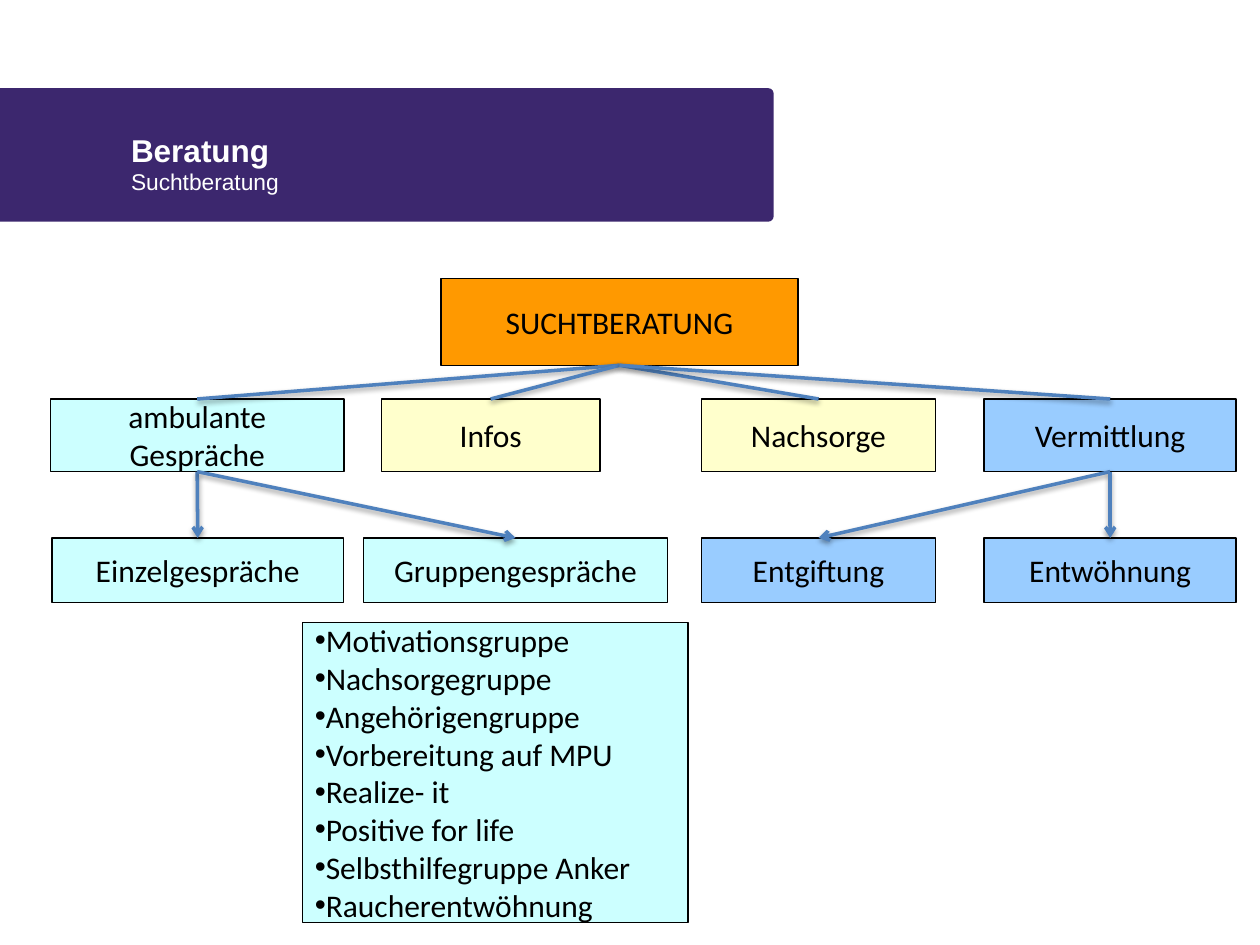
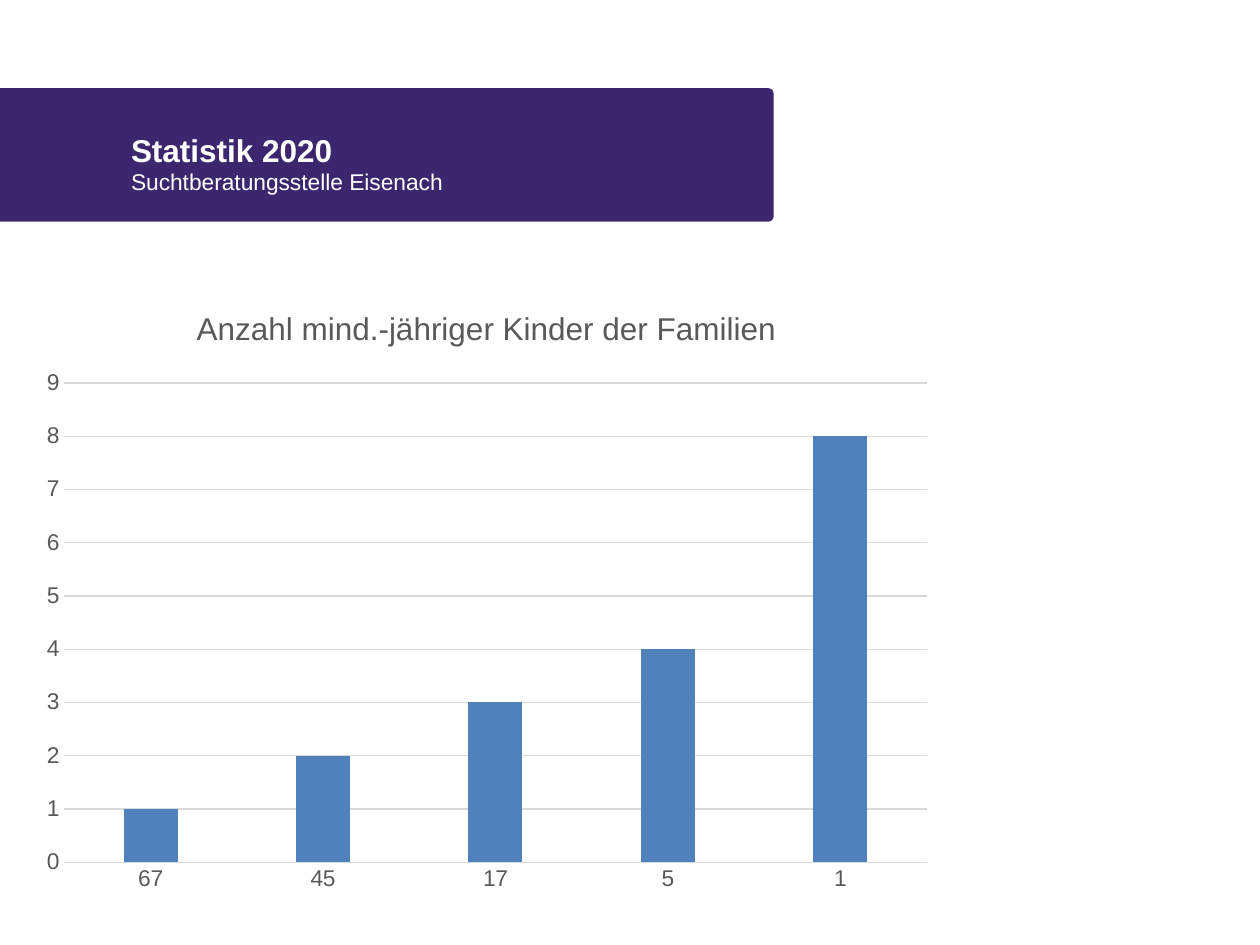
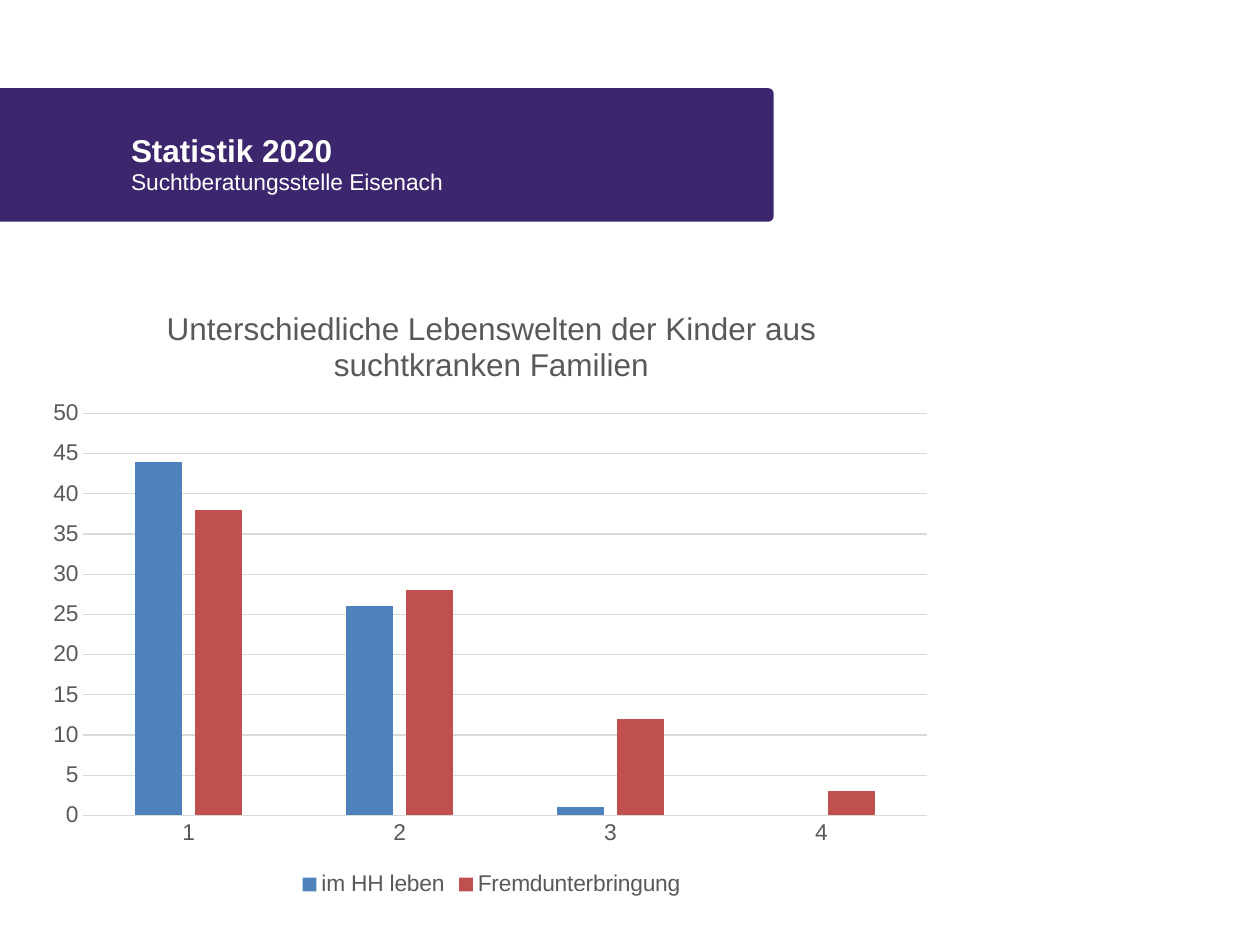
import pptx
import pptx.chart.data
import pptx.dml.color
import pptx.enum.chart
import pptx.enum.shapes
import pptx.enum.text
import pptx.oxml
import pptx.oxml.ns
import pptx.util

Pt = pptx.util.Pt
SHAPE = pptx.enum.shapes.MSO_SHAPE
ANCHOR = pptx.enum.text.MSO_ANCHOR
ALIGN = pptx.enum.text.PP_ALIGN
PURPLE, WHITE, BLACK = "3C276E", "FFFFFF", "000000"
ORANGE, CYAN, YELLOW, SKY = "FF9900", "CCFFFF", "FFFFCC", "99CCFF"
BLUE, RED, GREY, RULE = "4F81BD", "C0504D", "595959", "D9D9D9"


def color(value):
    return pptx.dml.color.RGBColor.from_string(value)


def element(markup):
    tag, rest = markup[1:].split(">", 1) if " " not in markup.split(">")[0] else (None, None)
    name = tag.rstrip("/") if tag else markup[1:].split(" ")[0]
    space = pptx.oxml.ns.nsdecls(name.split(":")[0])
    return pptx.oxml.parse_xml(markup.replace("<" + name, f"<{name} {space}", 1))


class Builder:
    """Holds the deck's shared style and the page being built."""

    def __init__(self):
        self.deck = pptx.Presentation()
        self.deck.slide_width, self.deck.slide_height = Pt(720), Pt(540)
        self.page = None

    def font(self, font, size, hue, name="Arial", bold=False):
        font.size, font.name, font.bold = Pt(size), name, bold
        font.color.rgb = color(hue)

    def start(self, title, subtitle):
        self.page = self.deck.slides.add_slide(self.deck.slide_layouts[6])
        band = self.rectangle((-8.6, 50.4, 450.7, 76.3), PURPLE, SHAPE.ROUNDED_RECTANGLE)
        band.adjustments[0] = 0.04
        band.line.fill.background()
        self.heading(title, 66.2, 30.2, ANCHOR.BOTTOM, 18, True)
        self.heading(subtitle, 95.8, 28, ANCHOR.TOP, 13, False)

    def heading(self, text, top, height, anchor, size, bold):
        box = self.page.shapes.add_textbox(Pt(74.9), Pt(top), Pt(352.8), Pt(height))
        frame = box.text_frame
        frame.word_wrap, frame.vertical_anchor = True, anchor
        frame.margin_left = frame.margin_right = frame.margin_top = frame.margin_bottom = 0
        span = frame.paragraphs[0].add_run()
        span.text = text
        self.font(span.font, size, WHITE, bold=bold)

    def rectangle(self, place, fill, kind=SHAPE.RECTANGLE):
        box = self.page.shapes.add_shape(kind, *map(Pt, place))
        box.shadow.inherit = False
        box.fill.solid()
        box.fill.fore_color.rgb = color(fill)
        return box

    def box(self, place, fill, *lines, bullets=False):
        box = self.rectangle(place, fill)
        box.line.color.rgb, box.line.width = color(BLACK), Pt(0.75)
        frame = box.text_frame
        frame.word_wrap, frame.vertical_anchor = True, ANCHOR.MIDDLE
        for index, line in enumerate(lines):
            para = frame.add_paragraph() if index else frame.paragraphs[0]
            para.alignment = ALIGN.LEFT if bullets else ALIGN.CENTER
            if bullets:
                settings = para._p.get_or_add_pPr()
                settings.append(element('<a:buFont typeface="Arial"/>'))
                settings.append(element('<a:buChar char="•"/>'))
            span = para.add_run()
            span.text = line
            self.font(span.font, 18, BLACK, "Calibri")
        return box

    def link(self, parent, child, arrow=False):
        line = self.page.shapes.add_connector(pptx.enum.shapes.MSO_CONNECTOR.STRAIGHT, 0, 0, 0, 0)
        line.begin_connect(parent, 2)
        line.end_connect(child, 0)
        line.line.color.rgb, line.line.width = color(BLUE), Pt(2)
        if arrow:
            line.line._get_or_add_ln().append(element('<a:tailEnd type="arrow"/>'))
        line._element.spPr.append(element(
            f'<a:effectLst><a:outerShdw blurRad="{Pt(3.1)}" dist="{Pt(1.6)}" dir="5400000" rotWithShape="0">'
            f'<a:srgbClr val="{BLACK}"><a:alpha val="38000"/></a:srgbClr></a:outerShdw></a:effectLst>'))

    def chart(self, place, title, categories, series, top, step, plot, legend=False):
        data = pptx.chart.data.CategoryChartData()
        data.categories = categories
        for name, values, _ in series:
            data.add_series(name, values)
        kind = pptx.enum.chart.XL_CHART_TYPE.COLUMN_CLUSTERED
        chart = self.page.shapes.add_chart(kind, *map(Pt, place), data).chart
        self.font(chart.font, 13, GREY)
        chart.has_title = True
        span = chart.chart_title.text_frame.paragraphs[0].add_run()
        span.text = title
        self.font(span.font, 18, GREY)
        chart.has_legend = legend
        if legend:
            chart.legend.position = pptx.enum.chart.XL_LEGEND_POSITION.BOTTOM
            chart.legend.include_in_layout = False
            self.font(chart.legend.font, 13, GREY)
        bars = chart.plots[0]
        bars.gap_width, bars.overlap, bars.vary_by_categories = 219, -27, False
        for bar, (_, _, hue) in zip(bars.series, series):
            bar.format.fill.solid()
            bar.format.fill.fore_color.rgb = color(hue)
        for axis in (chart.category_axis, chart.value_axis):
            axis.major_tick_mark = axis.minor_tick_mark = pptx.enum.chart.XL_TICK_MARK.NONE
            self.font(axis.tick_labels.font, 13, GREY)
        scale = chart.value_axis
        scale.minimum_scale, scale.maximum_scale, scale.major_unit = 0, top, step
        scale.format.line.fill.background()
        scale.has_major_gridlines = True
        for line in (chart.category_axis.format.line, scale.major_gridlines.format.line):
            line.color.rgb, line.width = color(RULE), Pt(0.75)
        self.place_plot(chart, plot)

    def place_plot(self, chart, plot):
        area = chart.element.xpath("c:chart/c:plotArea")[0]
        for layout in area.xpath("c:layout"):
            area.remove(layout)
        sides = "".join(f'<c:{side} val="{value}"/>' for side, value in zip("xywh", plot))
        area.insert(0, element(
            '<c:layout><c:manualLayout><c:layoutTarget val="inner"/><c:xMode val="edge"/>'
            f'<c:yMode val="edge"/>{sides}</c:manualLayout></c:layout>'))


def counselling(build):
    build.start("Beratung", "Suchtberatung")
    root = build.box((252, 159, 204, 49.75), ORANGE, "SUCHTBERATUNG")
    services = [build.box((left, 228, width, 41.5), fill, *lines) for left, width, fill, lines in (
        (28.8, 167.8, CYAN, ("ambulante", "Gespräche")),
        (218, 124.8, YELLOW, ("Infos",)),
        (401, 133.5, YELLOW, ("Nachsorge",)),
        (562.4, 144, SKY, ("Vermittlung",)))]
    offers = [build.box((left, 307.4, width, 36.8), fill, text) for left, width, fill, text in (
        (29.8, 166.4, CYAN, "Einzelgespräche"),
        (207.8, 173.6, CYAN, "Gruppengespräche"),
        (401, 133.5, SKY, "Entgiftung"),
        (562.4, 144, SKY, "Entwöhnung"))]
    build.box((172.8, 355.6, 220.4, 171.4), CYAN, "Motivationsgruppe", "Nachsorgegruppe",
              "Angehörigengruppe", "Vorbereitung auf MPU", "Realize- it", "Positive for life",
              "Selbsthilfegruppe Anker", "Raucherentwöhnung", bullets=True)
    for service in services:
        build.link(root, service)
    for index, offer in enumerate(offers):
        build.link(services[0 if index < 2 else 3], offer, arrow=True)


def statistics(build):
    heading = "Statistik 2020", "Suchtberatungsstelle Eisenach"
    build.start(*heading)
    build.chart((15.8, 162, 524.2, 355.7), "Anzahl mind.-jähriger Kinder der Familien",
                ("67", "45", "17", "5", "1"), [("Anzahl", (1, 2, 3, 4, 8), BLUE)],
                9, 1, (0.04, 0.16, 0.94, 0.77))
    build.start(*heading)
    build.chart((21.6, 162, 518.4, 353.5),
                "Unterschiedliche Lebenswelten der Kinder aus suchtkranken Familien",
                ("1", "2", "3", "4"),
                [("im HH leben", (44, 26, 1, None), BLUE),
                 ("Fremdunterbringung", (38, 28, 12, 3), RED)],
                50, 5, (0.05, 0.21, 0.93, 0.65), legend=True)


def main():
    build = Builder()
    counselling(build)
    statistics(build)
    build.deck.save("out.pptx")


if __name__ == "__main__":
    main()
